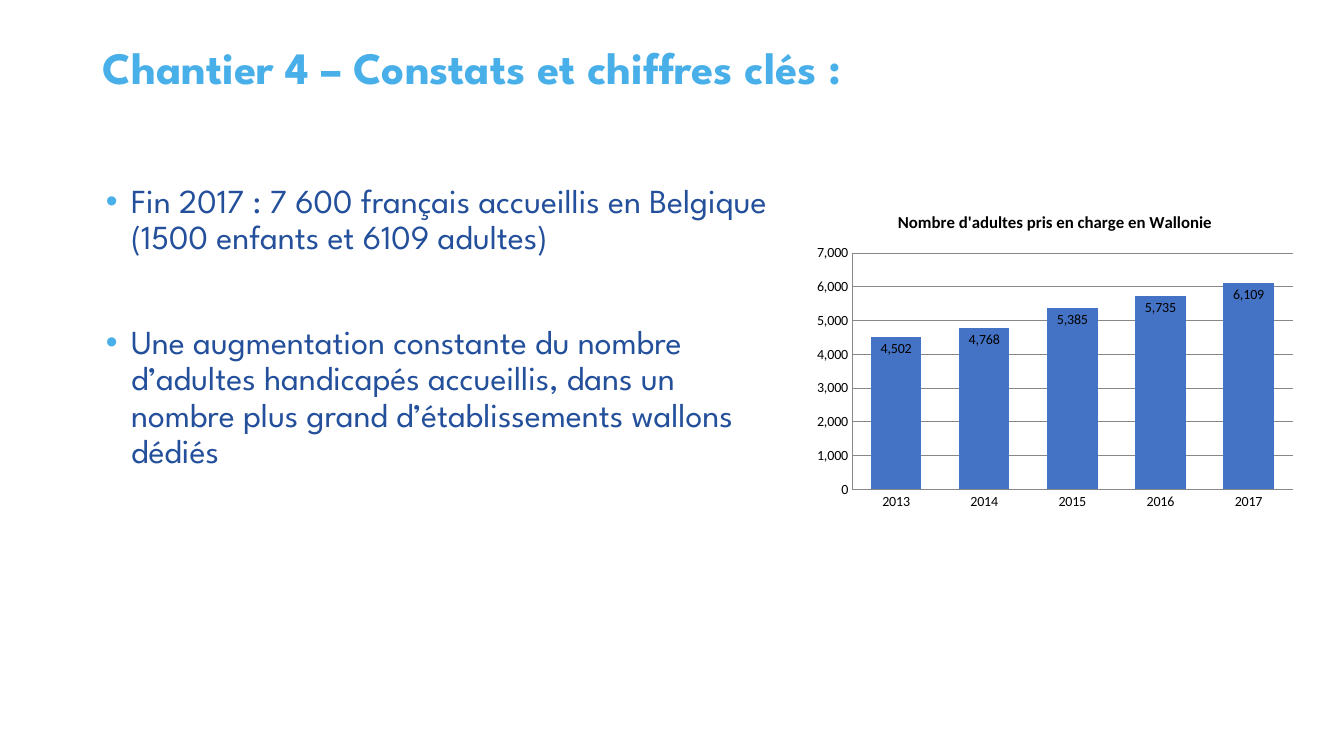
from dataclasses import dataclass

from lxml.etree import SubElement
from pptx import Presentation
from pptx.chart.data import CategoryChartData
from pptx.dml.color import RGBColor
from pptx.enum.chart import XL_CHART_TYPE, XL_LABEL_POSITION, XL_TICK_MARK
from pptx.enum.text import MSO_ANCHOR, MSO_AUTO_SIZE, PP_ALIGN
from pptx.oxml import parse_xml
from pptx.oxml.ns import nsdecls, qn
from pptx.util import Inches, Pt

COLORS = {"sky": "48AFE9", "navy": "234F9B", "bar": "4472C4",
          "text": "000000", "grid": "888888"}
TEXT_FONT = "League Spartan"
CHART_FONT = "Calibri"


@dataclass
class Bullet:
    text: str
    space_before: float


@dataclass
class YearCount:
    year: str
    adults: int


BULLETS = [
    Bullet("Fin 2017 : 7 600 français accueillis en Belgique "
           "(1500 enfants et 6109 adultes)", 10),
    Bullet("Une augmentation constante du nombre d’adultes handicapés accueillis, "
           "dans un nombre plus grand d’établissements wallons dédiés", 49),
]
COUNTS = [YearCount("2013", 4502), YearCount("2014", 4768), YearCount("2015", 5385),
          YearCount("2016", 5735), YearCount("2017", 6109)]


def rgb(name: str) -> RGBColor:
    return RGBColor.from_string(COLORS[name])


def style_font(font, size: float, color: str, name: str, bold: bool = False) -> None:
    font.size, font.name, font.bold = Pt(size), name, bold
    font.color.rgb = rgb(color)


def write(p, text: str, *, size: float, color: str, font: str = TEXT_FONT,
          bold: bool = False, space_before: float = 0, spacing: float | None = None) -> None:
    p.space_before = Pt(space_before)
    if spacing:
        p.line_spacing = spacing
    r = p.add_run()
    r.text = text
    style_font(r.font, size, color, font, bold)


def place(sp, left: float, top: float, width: float, height: float):
    """Move a placeholder and return its text frame, anchored at the top."""
    sp.left, sp.top = Inches(left), Inches(top)
    sp.width, sp.height = Inches(width), Inches(height)
    tf = sp.text_frame
    tf.word_wrap = True
    tf.auto_size = MSO_AUTO_SIZE.NONE
    tf.vertical_anchor = MSO_ANCHOR.TOP
    return tf


def set_bullet(p, color: str) -> None:
    pPr = p._p.get_or_add_pPr()
    pPr.set("marL", str(Inches(0.25)))
    pPr.set("indent", str(-Inches(0.25)))
    SubElement(SubElement(pPr, qn("a:buClr")), qn("a:srgbClr"), val=COLORS[color])
    SubElement(pPr, qn("a:buFont"), typeface="Arial")
    SubElement(pPr, qn("a:buChar"), char="•")


def set_plot_area(chart, x: float, y: float, w: float, h: float) -> None:
    """Fix the inner plot area, in fractions of the chart."""
    plot_area = chart._chartSpace.chart.plotArea
    for old in plot_area.findall(qn("c:layout")):
        plot_area.remove(old)
    plot_area.insert(0, parse_xml(
        f'<c:layout {nsdecls("c")}><c:manualLayout><c:layoutTarget val="inner"/>'
        '<c:xMode val="edge"/><c:yMode val="edge"/>'
        f'<c:x val="{x}"/><c:y val="{y}"/><c:w val="{w}"/><c:h val="{h}"/>'
        '</c:manualLayout></c:layout>'))


def add_adults_chart(s) -> None:
    data = CategoryChartData(number_format="#,##0")
    data.categories = [c.year for c in COUNTS]
    data.add_series("Adultes", [c.adults for c in COUNTS])
    chart = s.shapes.add_chart(XL_CHART_TYPE.COLUMN_CLUSTERED, Inches(8.01), Inches(1.94),
                               Inches(4.91), Inches(3.17), data).chart
    style_font(chart.font, 10, "text", CHART_FONT)
    chart.has_legend = False
    chart.has_title = True
    write(chart.chart_title.text_frame.paragraphs[0],
          "Nombre d'adultes pris en charge en Wallonie",
          size=12, color="text", font=CHART_FONT, bold=True)
    chart.chart_title.include_in_layout = False
    set_plot_area(chart, 0.09, 0.18, 0.89, 0.74)

    for axis in (chart.category_axis, chart.value_axis):
        axis.major_tick_mark = axis.minor_tick_mark = XL_TICK_MARK.NONE
        axis.format.line.color.rgb = rgb("grid")
        axis.format.line.width = Pt(0.75)
    values = chart.value_axis
    values.minimum_scale, values.maximum_scale, values.major_unit = 0, 7000, 1000
    values.tick_labels.number_format = "#,##0"
    values.tick_labels.number_format_is_linked = False
    values.major_gridlines.format.line.color.rgb = rgb("grid")
    values.major_gridlines.format.line.width = Pt(0.75)

    plot = chart.plots[0]
    plot.gap_width, plot.overlap, plot.vary_by_categories = 75, 40, False
    fill = plot.series[0].format.fill
    fill.solid()
    fill.fore_color.rgb = rgb("bar")
    plot.has_data_labels = True
    labels = plot.data_labels
    labels.show_value = True
    labels.position = XL_LABEL_POSITION.INSIDE_END
    labels.number_format, labels.number_format_is_linked = "#,##0", False
    style_font(labels.font, 10, "text", CHART_FONT)


def main() -> None:
    prs = Presentation()
    prs.slide_width, prs.slide_height = Inches(13.33), Inches(7.5)
    s = prs.slides.add_slide(prs.slide_layouts[1])

    p = place(s.shapes.title, 0.92, 0.4, 11.5, 1.45).paragraphs[0]
    p.alignment = PP_ALIGN.LEFT
    write(p, "Chantier 4 – Constats et chiffres clés :", size=32, color="sky",
          bold=True, spacing=0.9)

    tf = place(s.placeholders[1], 0.95, 1.78, 6.77, 4.45)
    for i, bullet in enumerate(BULLETS):
        p = tf.add_paragraph() if i else tf.paragraphs[0]
        write(p, bullet.text, size=24, color="navy",
              space_before=bullet.space_before, spacing=0.9)
        set_bullet(p, "sky")

    add_adults_chart(s)
    prs.save("out.pptx")


if __name__ == "__main__":
    main()
